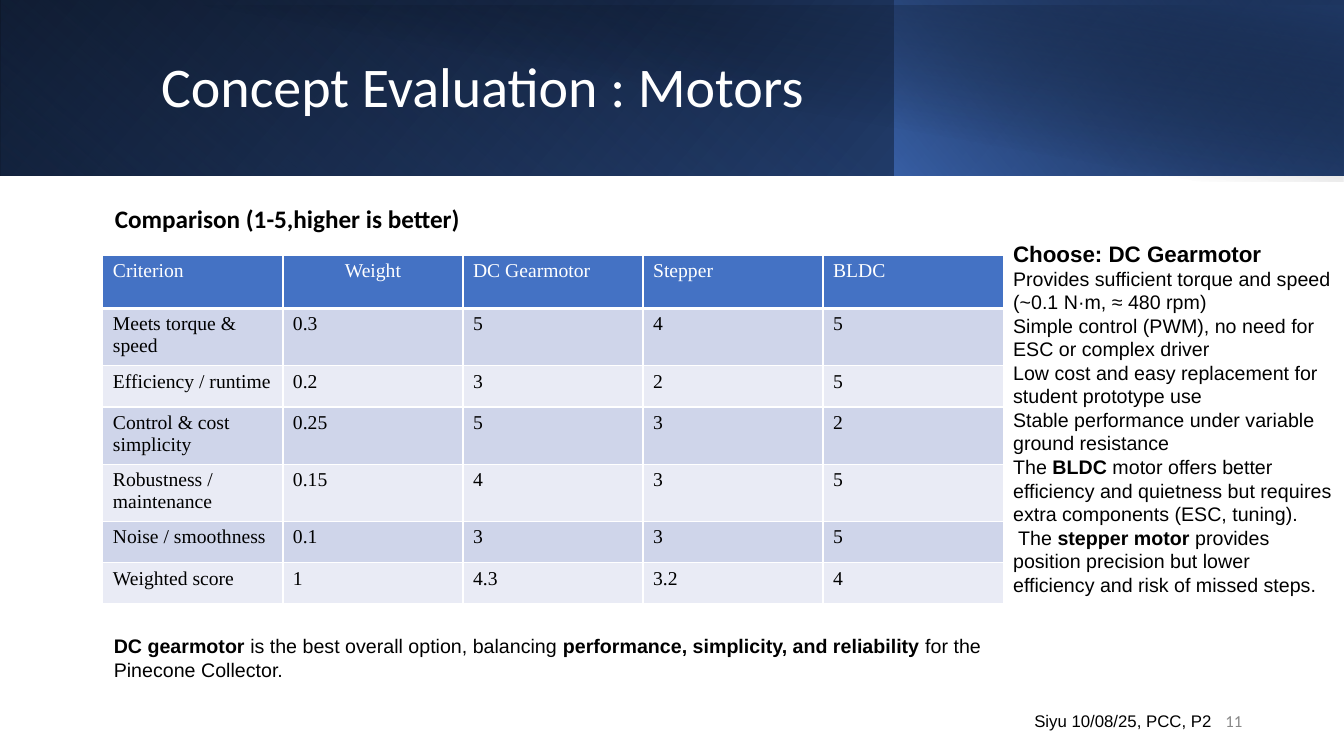
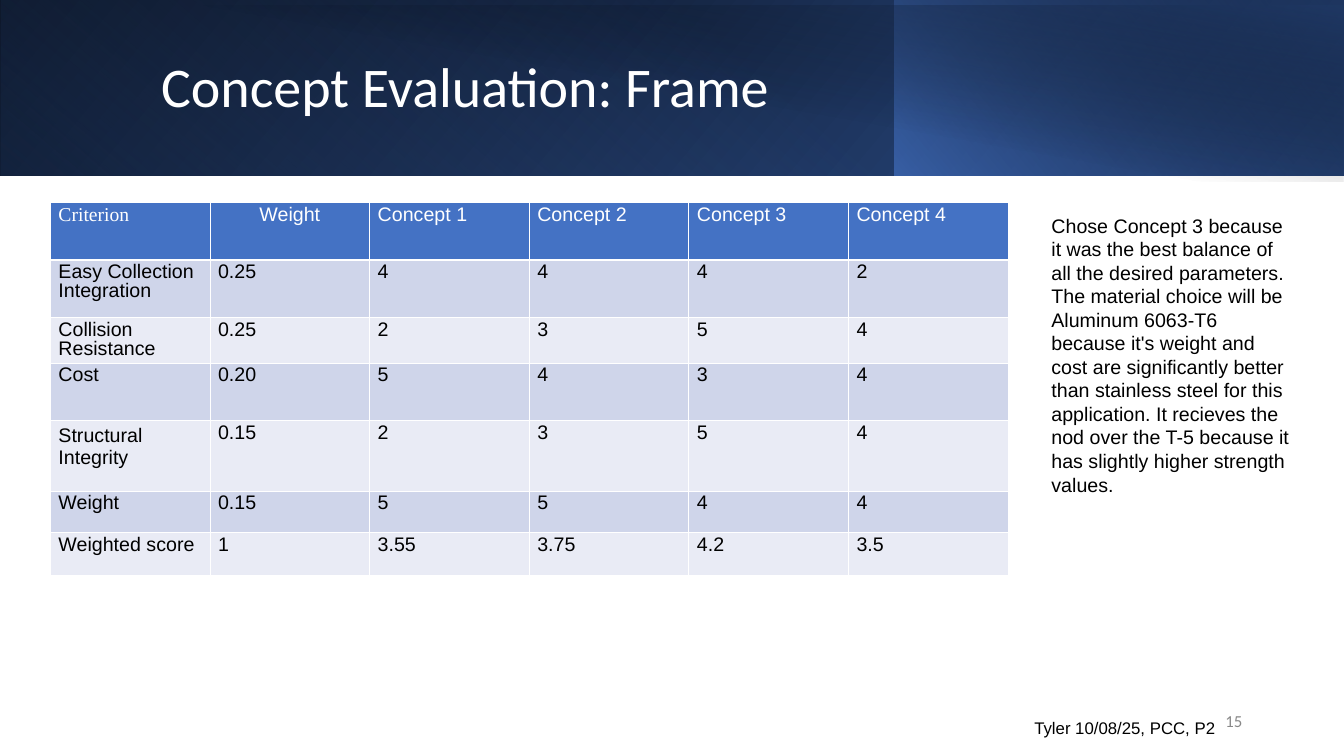
from lxml import etree
from pptx import Presentation
from pptx import util as u
from pptx.dml.color import RGBColor
from pptx.enum import shapes, text
from pptx.oxml import ns

PX = 9144  # EMU in one px, 100 px to the inch
WHITE, BLACK, GREY = "FFFFFF", "000000", "888888"
ACCENT, NAVY, BLUE = "4472C4", "1F3864", "2F5496"
ROW_FILLS = "CFD5EA", "E9EBF5"
BODY_FONT, TITLE_FONT, SERIF_FONT = "Arial", "Calibri", "Times New Roman"

# box, rotation, mirrored, gradient angle, stops of (position, colour, opacity)
BANDS = [
    ((0, 0, 1333, 174), 0, True, 140, [(0, BLACK, 100), (100, BLUE, 100)]),
    ((0, 0, 888, 174), 180, True, 230,
     [(0, ACCENT, 0), (20, ACCENT, 0), (100, NAVY, 55)]),
    ((887, 0, 446, 174), 0, True, 220, [(0, ACCENT, 66), (100, BLACK, 30)]),
    ((50, 5, 1283, 175), 0, False, 280,
     [(0, BLACK, 0), (50, BLACK, 0), (99, NAVY, 52), (100, NAVY, 52)]),
]

MOTOR_ROWS = [
    ["Criterion", "Weight", "DC Gearmotor", "Stepper", "BLDC"],
    ["Meets torque & speed", "0.3", "5", "4", "5"],
    ["Efficiency / runtime", "0.2", "3", "2", "5"],
    ["Control & cost simplicity", "0.25", "5", "3", "2"],
    ["Robustness / maintenance", "0.15", "4", "3", "5"],
    ["Noise / smoothness", "0.1", "3", "3", "5"],
    ["Weighted score", "1", "4.3", "3.2", "4"],
]
MOTOR_REASONS = [
    "Provides sufficient torque and speed (~0.1 N·m, ≈ 480 rpm)",
    "Simple control (PWM), no need for ESC or complex driver",
    "Low cost and easy replacement for student prototype use",
    "Stable performance under variable ground resistance",
    "The **BLDC** motor offers better efficiency and quietness but requires "
    "extra components (ESC, tuning).\n The **stepper motor** provides "
    "position precision but lower efficiency and risk of missed steps.",
]
MOTOR_CONCLUSION = (
    "**DC gearmotor** is the best overall option, balancing **performance, "
    "simplicity, and reliability** for the Pinecone Collector.")

FRAME_ROWS = [
    ["Criterion", "Weight", "Concept 1", "Concept 2", "Concept 3", "Concept 4"],
    ["Easy Collection Integration", "0.25", "4", "4", "4", "2"],
    ["Collision Resistance", "0.25", "2", "3", "5", "4"],
    ["Cost", "0.20", "5", "4", "3", "4"],
    ["Structural Integrity", "0.15", "2", "3", "5", "4"],
    ["Weight", "0.15", "5", "5", "4", "4"],
    ["Weighted score", "1", "3.55", "3.75", "4.2", "3.5"],
]
FRAME_REASON = (
    "Chose Concept 3 because it was the best balance of all the desired "
    "parameters. The material choice will be Aluminum 6063-T6 because it's "
    "weight and cost are significantly better than stainless steel for this "
    "application. It recieves the nod over the T-5 because it has slightly "
    "higher strength values.")


def px(*lengths):
    return [u.Emu(round(length * PX)) for length in lengths]


def rgb(colour):
    return RGBColor.from_string(colour)


def add_xml(parent, tag, **attributes):
    return etree.SubElement(parent, ns.qn(tag), attributes)


def write(frame, content, size=14, font=BODY_FONT, colour=BLACK, bold=False,
          align=text.PP_ALIGN.LEFT, spacing=None):
    """Add one paragraph; ** toggles bold and a newline breaks the line."""
    paragraph = frame.paragraphs[0]
    if paragraph.runs:
        paragraph = frame.add_paragraph()
    paragraph.alignment = align
    paragraph.line_spacing = spacing
    for part_index, part in enumerate(content.split("**")):
        for line_index, line in enumerate(part.split("\n")):
            if line_index:
                paragraph.add_line_break()
            if not line:
                continue
            run = paragraph.add_run()
            run.text = line
            run.font.size = u.Pt(size)
            run.font.name = font
            run.font.bold = bold or part_index % 2 == 1
            run.font.color.rgb = rgb(colour)


def add_frame(slide, box, anchor=text.MSO_ANCHOR.TOP):
    frame = slide.shapes.add_textbox(*px(*box)).text_frame
    frame.word_wrap = True
    frame.vertical_anchor = anchor
    return frame


def add_band(slide, box, rotation, mirrored, angle, stops):
    shape = slide.shapes.add_shape(shapes.MSO_SHAPE.RECTANGLE, *px(*box))
    shape.shadow.inherit = False
    shape.line.fill.background()
    shape.rotation = rotation
    properties = shape._element.spPr
    if mirrored:
        properties.find(ns.qn("a:xfrm")).set("flipH", "1")
    gradient = etree.Element(ns.qn("a:gradFill"), rotWithShape="1")
    stop_list = add_xml(gradient, "a:gsLst")
    for position, colour, opacity in stops:
        stop = add_xml(stop_list, "a:gs", pos=str(position * 1000))
        fill = add_xml(stop, "a:srgbClr", val=colour)
        if opacity < 100:
            add_xml(fill, "a:alpha", val=str(opacity * 1000))
    add_xml(gradient, "a:lin", ang=str(angle * 60000), scaled="0")
    properties.find(ns.qn("a:prstGeom")).addnext(gradient)


def set_borders(cell, **widths):
    """Draw white borders; widths in points, keyed by L, R, T and B."""
    properties = cell._tc.get_or_add_tcPr()
    for index, side in enumerate("LRTB"):
        line = etree.Element(ns.qn(f"a:ln{side}"), w=str(u.Pt(widths[side])))
        add_xml(add_xml(line, "a:solidFill"), "a:srgbClr", val=WHITE)
        properties.insert(index, line)


def add_score_table(slide, box, heights, rows, border, font=BODY_FONT,
                    margins=(10, 5), spacing=None, loose_cells=()):
    """Add a banded table; loose_cells keep single line spacing."""
    left, top, width = box
    column_count = len(rows[0])
    table = slide.shapes.add_table(
        len(rows), column_count, *px(left, top, width, sum(heights))).table
    table.horz_banding = False
    for column in table.columns:
        column.width = px(width / column_count)[0]
    for row_index, (values, height) in enumerate(zip(rows, heights)):
        table.rows[row_index].height = px(height)[0]
        header = row_index == 0
        for column_index, value in enumerate(values):
            cell = table.cell(row_index, column_index)
            cell.margin_left = cell.margin_right = px(margins[0])[0]
            cell.margin_top = cell.margin_bottom = px(margins[1])[0]
            cell.fill.solid()
            cell.fill.fore_color.rgb = rgb(
                ACCENT if header else ROW_FILLS[(row_index - 1) % 2])
            set_borders(cell, L=border, R=border,
                        T=border * 3 if row_index == 1 else border,
                        B=border * 3 if header else border)
            corner = header and column_index == 0
            centred = header and column_index == 1
            write(cell.text_frame, value,
                  font=SERIF_FONT if corner else font,
                  colour=WHITE if header else BLACK,
                  align=text.PP_ALIGN.CENTER if centred else text.PP_ALIGN.LEFT,
                  spacing=None if value in loose_cells else spacing)


def add_base_slide(presentation, title, number, footer, footer_top):
    slide = presentation.slides.add_slide(presentation.slide_layouts[6])
    for band in BANDS:
        add_band(slide, *band)
    middle = text.MSO_ANCHOR.MIDDLE
    write(add_frame(slide, (150, 32, 1082, 113), middle), title,
          size=40, font=TITLE_FONT, colour=WHITE, spacing=0.9)
    write(add_frame(slide, (942, 695, 300, 40), middle), number, size=12,
          font=TITLE_FONT, colour=GREY, align=text.PP_ALIGN.RIGHT)
    write(add_frame(slide, (1016, footer_top, 200, 30)), footer, size=12)
    return slide


def add_motor_slide(presentation):
    slide = add_base_slide(presentation, "Concept Evaluation : Motors", "11",
                           "Siyu 10/08/25, PCC, P2", 700)
    write(add_frame(slide, (104, 200, 890, 40)),
          "Comparison (1-5,higher is better)",
          size=18, font=TITLE_FONT, bold=True, spacing=0.9)
    add_score_table(slide, (102, 253, 893), [53, 53, 41, 53, 53, 41, 41],
                    MOTOR_ROWS, border=1, font=SERIF_FONT)
    reasons = add_frame(slide, (995, 233, 337, 390))
    write(reasons, "Choose: DC Gearmotor", size=16, bold=True)
    for reason in MOTOR_REASONS:
        write(reasons, reason)
    write(add_frame(slide, (103, 624, 905, 57)), MOTOR_CONCLUSION)


def add_frame_slide(presentation):
    slide = add_base_slide(presentation, "Concept Evaluation: Frame", "15",
                           "Tyler 10/08/25, PCC, P2", 707)
    add_score_table(slide, (50, 201, 950), [57, 57, 45, 57, 70, 41, 43],
                    FRAME_ROWS, border=0.8, margins=(8, 4),
                    spacing=u.Pt(13.5), loose_cells=["Structural Integrity"])
    write(add_frame(slide, (1033, 207, 257, 293)), FRAME_REASON)


def main():
    presentation = Presentation()
    presentation.slide_width, presentation.slide_height = px(1333, 750)
    add_motor_slide(presentation)
    add_frame_slide(presentation)
    presentation.save("out.pptx")


if __name__ == "__main__":
    main()
